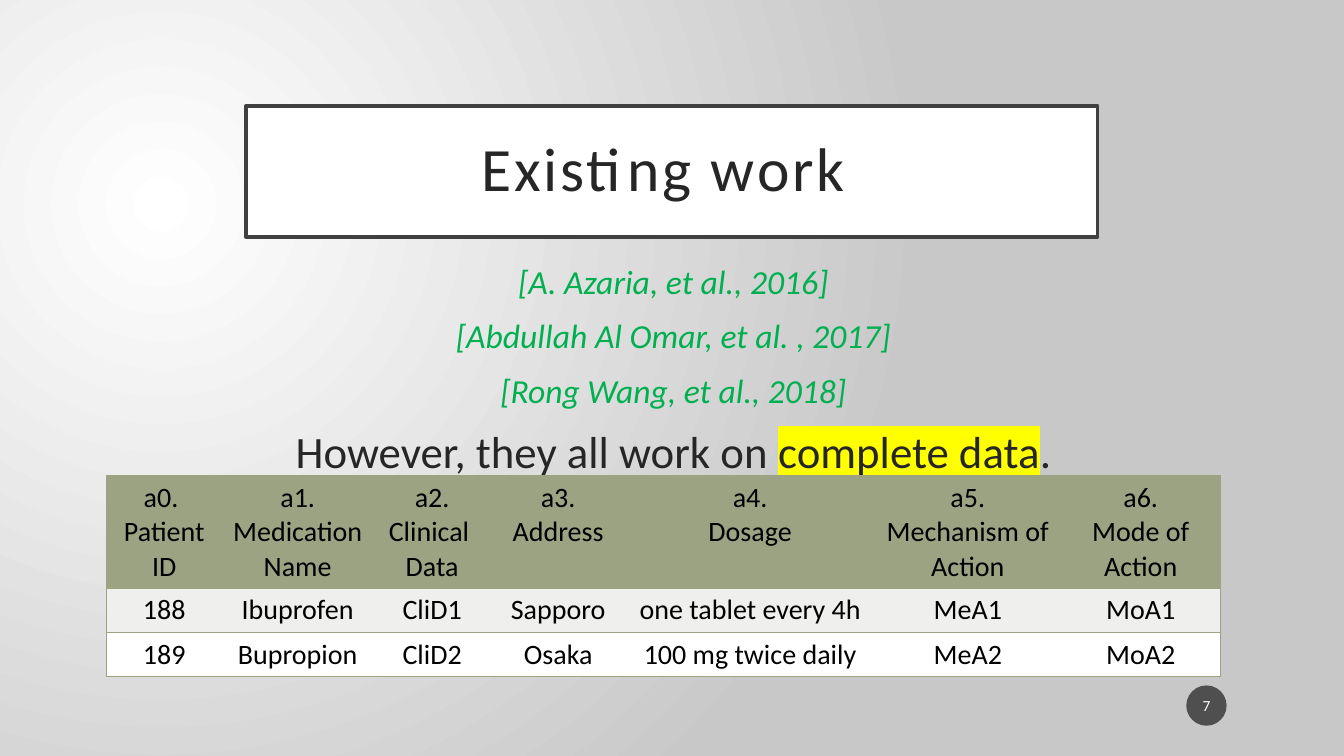
from lxml.etree import SubElement
from pptx import Presentation
from pptx.dml.color import RGBColor
from pptx.enum.shapes import MSO_SHAPE as Shape
from pptx.enum.text import MSO_ANCHOR as Anchor, MSO_AUTO_SIZE as AutoSize, PP_ALIGN as Align
from pptx.oxml.ns import qn
from pptx.util import Pt

FONT = "Calibri"
COLORS = {
    "white": "FFFFFF", "grey": "C8C8C8", "ink": "262626", "frame": "404040",
    "black": "000000", "citation": "00B050", "marker": "FFFF00",
    "badge": "1D1D1D", "olive": "9CA383", "band": "EFF0ED",
}
CITATIONS = [
    "[A. Azaria, et al., 2016]",
    "[Abdullah Al Omar, et al. , 2017]",
    "[Rong Wang, et al., 2018]",
]
# Each cell is a list of paragraphs; \n is a line break inside one
HEADER = [
    ["a0. \nPatient ID"], ["a1.", "Medication Name"], ["a2.", "Clinical ", "Data"],
    ["a3.", "Address"], ["a4.", "Dosage"], ["a5.", "Mechanism of Action"],
    ["a6.", "Mode of Action"],
]
RECORDS = [
    ["188", "Ibuprofen", "CliD1", "Sapporo", "one tablet every 4h", "MeA1", "MoA1"],
    ["189", "Bupropion", "CliD2", "Osaka", "100 mg twice daily", "MeA2", "MoA2"],
]
COLUMN_WIDTHS = [82, 108.7, 83.5, 96.5, 177.8, 133.2, 113.8]
ROW_HEIGHTS = [80.4, 31.6, 31.6]


def rgb(name):
    return RGBColor.from_string(COLORS[name])


def add_run(paragraph, text, size, color, italic=False, highlight=None):
    run = paragraph.add_run()
    run.text = text
    font = run.font
    font.name, font.size, font.bold, font.italic = FONT, Pt(size), False, italic
    font.color.rgb = rgb(color)
    if highlight:
        props = run._r.get_or_add_rPr()
        mark = SubElement(props, qn("a:highlight"))
        SubElement(mark, qn("a:srgbClr"), val=COLORS[highlight])
        props.find(qn("a:solidFill")).addnext(mark)
    return run


def next_paragraph(frame, index, space_before=0):
    paragraph = frame.add_paragraph() if index else frame.paragraphs[0]
    paragraph.alignment = Align.CENTER
    paragraph.space_before = Pt(space_before)
    return paragraph


def set_margins(frame, horizontal, vertical):
    frame.margin_left = frame.margin_right = Pt(horizontal)
    frame.margin_top = frame.margin_bottom = Pt(vertical)


def place(shape, left, top, width, height):
    shape.left, shape.top = Pt(left), Pt(top)
    shape.width, shape.height = Pt(width), Pt(height)


def paint_background(slide):
    fill = slide.background.fill
    fill.gradient()
    for stop, color in zip(fill.gradient_stops, ("white", "grey")):
        stop.color.rgb = rgb(color)
    gradient = slide.element.xpath(".//p:bg//a:gradFill")[0]
    gradient.remove(gradient.find(qn("a:lin")))
    circle = SubElement(gradient, qn("a:path"), path="circle")
    SubElement(circle, qn("a:fillToRect"), l="50000", t="55000", r="125000", b="100000")


def add_title(slide, text):
    title = slide.shapes.title
    place(title, 175.7, 75.6, 608.4, 93.6)
    title.fill.solid()
    title.fill.fore_color.rgb = rgb("white")
    title.line.color.rgb = rgb("frame")
    title.line.width = Pt(2.5)
    frame = title.text_frame
    frame.auto_size, frame.vertical_anchor = AutoSize.NONE, Anchor.MIDDLE
    set_margins(frame, 14.4, 14.4)
    paragraph = next_paragraph(frame, 0)
    paragraph.line_spacing = 0.9
    run = add_run(paragraph, text, 44, "ink")
    run._r.get_or_add_rPr().set("spc", "200")


def add_related_work(slide):
    body = slide.shapes.add_textbox(Pt(63.4), Pt(182.9), Pt(835.2), Pt(180))
    frame = body.text_frame
    frame.word_wrap = True
    for index, citation in enumerate(CITATIONS):
        add_run(next_paragraph(frame, index, 10), citation, 24, "citation", italic=True)
    remark = next_paragraph(frame, len(CITATIONS), 10)
    add_run(remark, "However, they all work on ", 32, "ink")
    add_run(remark, "complete data", 32, "ink", highlight="marker")
    add_run(remark, ".", 32, "ink")


def add_page_badge(slide, number):
    badge = slide.shapes.add_shape(Shape.OVAL, Pt(847.4), Pt(489.6), Pt(28.8), Pt(28.8))
    badge.shadow.inherit = False
    badge.fill.solid()
    badge.fill.fore_color.rgb = rgb("badge")
    color = badge.fill._xPr.find(qn("a:solidFill"))[0]
    SubElement(color, qn("a:alpha"), val="70000")
    badge.line.fill.background()
    frame = badge.text_frame
    frame.vertical_anchor = Anchor.MIDDLE
    set_margins(frame, 1.4, 3.6)
    add_run(next_paragraph(frame, 0), number, 11, "white")


def set_borders(cell, visible):
    props = cell._tc.get_or_add_tcPr()
    for index, side in enumerate("LRTB"):
        line = SubElement(props, qn(f"a:ln{side}"), w=str(Pt(1)))
        if side in visible:
            paint = SubElement(line, qn("a:solidFill"))
            SubElement(paint, qn("a:srgbClr"), val=COLORS["olive"])
        else:
            SubElement(line, qn("a:noFill"))
        props.insert(index, line)


def fill_cell(cell, paragraphs, color, borders):
    cell.fill.solid()
    cell.fill.fore_color.rgb = rgb(color)
    set_borders(cell, borders)
    for index, text in enumerate(paragraphs):
        paragraph = next_paragraph(cell.text_frame, index)
        for number, line in enumerate(text.split("\n")):
            if number:
                paragraph.add_line_break()
            add_run(paragraph, line, 20, "black")


def add_record_table(slide):
    rows = [HEADER] + [[[value] for value in record] for record in RECORDS]
    frame = slide.shapes.add_table(
        len(rows), len(HEADER), Pt(76.3), Pt(339.8),
        Pt(sum(COLUMN_WIDTHS)), Pt(sum(ROW_HEIGHTS)))
    table = frame.table
    table.first_row = table.horz_banding = False
    for column, width in zip(table.columns, COLUMN_WIDTHS):
        column.width = Pt(width)
    for row, height in zip(table.rows, ROW_HEIGHTS):
        row.height = Pt(height)
    last = len(HEADER) - 1
    for r, (values, color) in enumerate(zip(rows, ("olive", "band", "white"))):
        for c, paragraphs in enumerate(values):
            borders = "TB" + ("L" if c == 0 else "R" if c == last else "")
            fill_cell(table.cell(r, c), paragraphs, color, borders)


def main():
    deck = Presentation()
    deck.slide_width, deck.slide_height = Pt(960), Pt(540)
    slide = deck.slides.add_slide(deck.slide_layouts[5])
    paint_background(slide)
    add_title(slide, "Existing work ")
    add_related_work(slide)
    add_page_badge(slide, "7")
    add_record_table(slide)
    deck.save("out.pptx")


if __name__ == "__main__":
    main()
